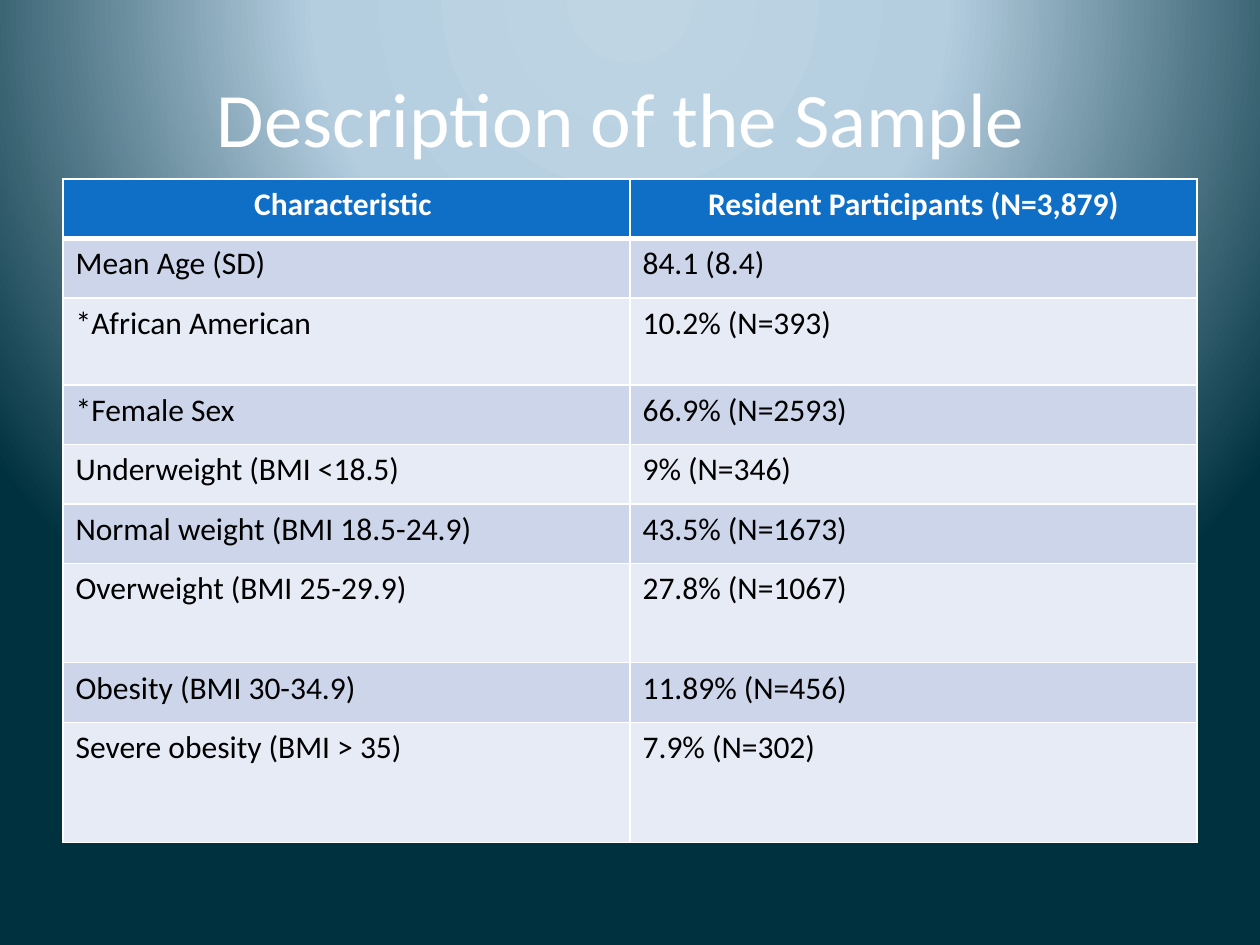
import pptx
import pptx.util
import pptx.dml.color
import pptx.enum.text
import pptx.oxml
import pptx.oxml.ns
from lxml import etree
from pptx.util import Cm, Pt


def color(hex_string):
    return pptx.dml.color.RGBColor.from_string(hex_string)


def add_border(cell, side, hex_string, points):
    """Draw one cell edge (L, R, T or B); call it before the cell is filled."""
    properties = cell._tc.get_or_add_tcPr()
    properties.append(pptx.oxml.parse_xml(
        f'<a:ln{side} {pptx.oxml.ns.nsdecls("a")} w="{Pt(points)}">'
        f'<a:solidFill><a:srgbClr val="{hex_string}"/></a:solidFill></a:ln{side}>'))


presentation = pptx.Presentation()
presentation.slide_width = Cm(25.4)
presentation.slide_height = Cm(19.05)
slide = presentation.slides.add_slide(presentation.slide_layouts[6])

# Radial background centred above the slide
slide.background.fill.gradient()
gradient = slide.element.find(".//" + pptx.oxml.ns.qn("a:gradFill"))
for child in list(gradient):
    gradient.remove(child)
stops = etree.SubElement(gradient, pptx.oxml.ns.qn("a:gsLst"))
for percent, hex_string in [(0, "BFD5E4"), (40, "B4CEE0"), (100, "00313F")]:
    stop = etree.SubElement(stops, pptx.oxml.ns.qn("a:gs"), pos=str(percent * 1000))
    etree.SubElement(stop, pptx.oxml.ns.qn("a:srgbClr"), val=hex_string)
circle = etree.SubElement(gradient, pptx.oxml.ns.qn("a:path"), path="circle")
etree.SubElement(circle, pptx.oxml.ns.qn("a:fillToRect"),
                 l="50000", t="-80000", r="50000", b="180000")

# Title
title = slide.shapes.add_textbox(Cm(1.27), Cm(0.76), Cm(22.86), Cm(3.18))
title.text_frame.word_wrap = True
title.text_frame.vertical_anchor = pptx.enum.text.MSO_ANCHOR.MIDDLE
paragraph = title.text_frame.paragraphs[0]
paragraph.text = "Description of the Sample "
paragraph.alignment = pptx.enum.text.PP_ALIGN.CENTER
paragraph.font.name = "Calibri"
paragraph.font.size = Pt(44)
paragraph.font.color.rgb = color("FFFFFF")

# Sample table: row height in cm, characteristic, participants
rows = [
    (1.2, "Characteristic ", "Resident Participants (N=3,879)"),
    (1.2, "Mean Age (SD)", "84.1 (8.4)"),
    (1.75, "*African American", "10.2% (N=393)"),
    (1.2, "*Female Sex", "66.9% (N=2593)"),
    (1.2, "Underweight (BMI <18.5)", "9% (N=346)"),
    (1.2, "Normal weight (BMI 18.5-24.9)", "43.5% (N=1673)"),
    (2, "Overweight (BMI 25-29.9)", "27.8% (N=1067)"),
    (1.2, "Obesity (BMI 30-34.9)", "11.89% (N=456)"),
    (2.42, "Severe obesity (BMI > 35)", "7.9% (N=302)"),
]
table_height = sum(row[0] for row in rows)
table = slide.shapes.add_table(len(rows), 2, Cm(1.27), Cm(3.61),
                               Cm(22.86), Cm(table_height)).table
for row_index, (height, *texts) in enumerate(rows):
    table.rows[row_index].height = Cm(height)
    is_header = row_index == 0
    if is_header:
        fill_color = "0F6FC6"
    else:
        fill_color = "CCD5EA" if row_index % 2 else "E7EBF5"
    for column_index, text in enumerate(texts):
        cell = table.cell(row_index, column_index)
        for side in "LRTB":
            below_header = (row_index, side) in [(0, "B"), (1, "T")]
            add_border(cell, side, "FFFFFF", 3 if below_header else 1)
        cell.fill.solid()
        cell.fill.fore_color.rgb = color(fill_color)
        paragraph = cell.text_frame.paragraphs[0]
        paragraph.text = text
        if is_header:
            paragraph.alignment = pptx.enum.text.PP_ALIGN.CENTER
        paragraph.font.name = "Calibri"
        paragraph.font.size = Pt(18)
        paragraph.font.bold = is_header
        paragraph.font.color.rgb = color("FFFFFF" if is_header else "000000")

presentation.save("out.pptx")
